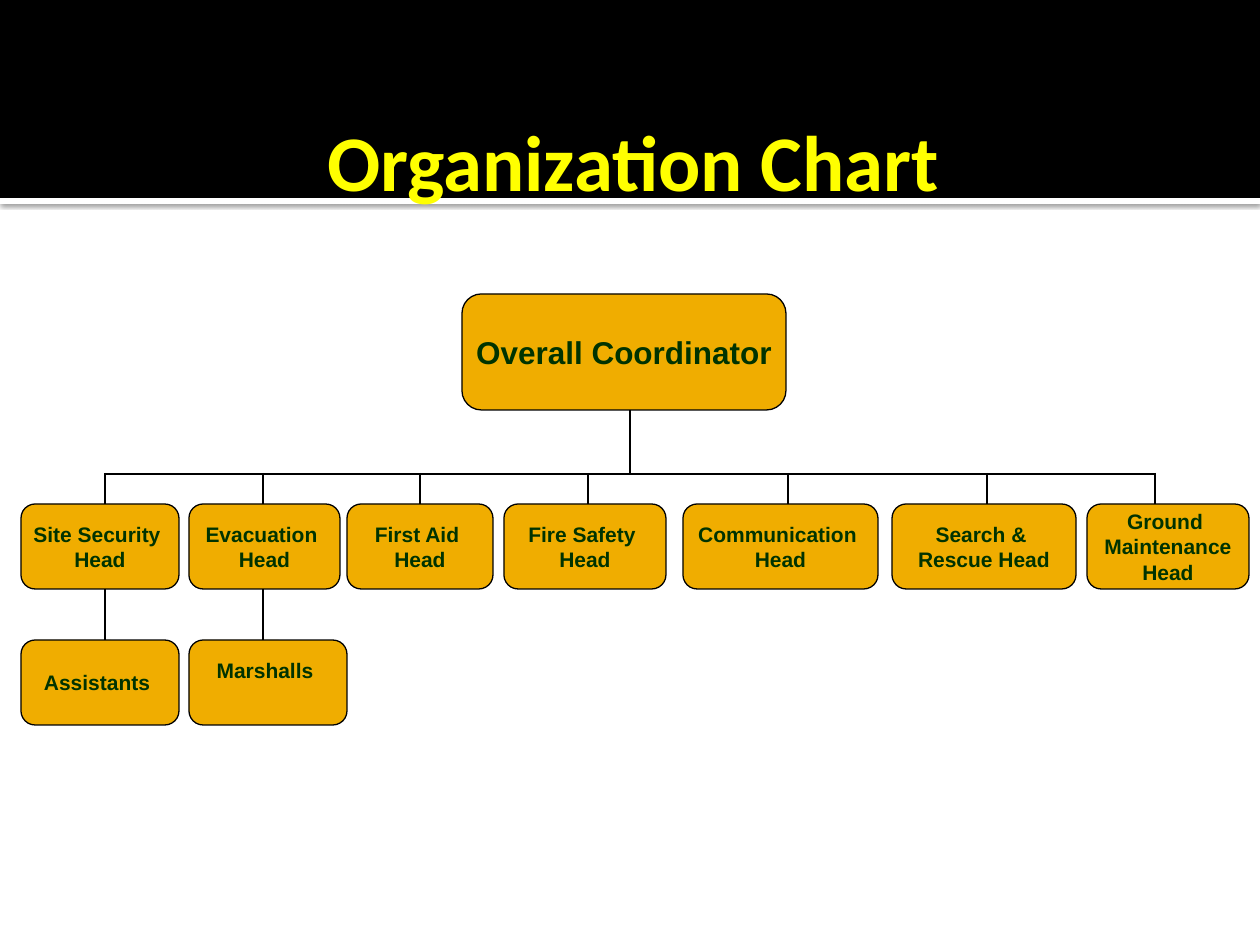
"""Build the organization chart slide."""
from lxml import etree
from pptx import Presentation, util as u
from pptx.dml.color import RGBColor
from pptx.enum import shapes as s, text as t
from pptx.oxml import parse_xml
from pptx.oxml.ns import nsdecls, qn

HEX = {"black": "000000", "white": "FFFFFF", "gold": "F0AD00",
       "green": "003300", "yellow": "FFFF00"}
TITLE = "Organization Chart"
CHIEF = ("Overall Coordinator", 462, 324)
HEADS = [
    ("Site Security \nHead", 21, 158, 105),
    ("Evacuation \nHead", 189, 151, 263),
    ("First Aid \nHead", 347, 146, 420),
    ("Fire Safety \nHead", 504, 162, 588),
    ("Communication \nHead", 683, 195, 788),
    ("Search & \nRescue Head", 892, 184, 987),
    ("Ground \nMaintenance\nHead", 1087, 162, 1155),
]
TEAMS = [("Assistants ", 0), ("Marshalls ", 24)]
TOP, TALL = 294, 116
BUS, ROW, HIGH, LOW = 473, 504, 85, 640
MID, TEAM = 630, 158


def px(n):
    return u.Emu(round(n * 914400 / 126))


def color(name):
    return RGBColor.from_string(HEX[name])


def style(frame, size, face, ink):
    frame.vertical_anchor = t.MSO_ANCHOR.MIDDLE
    for para in frame.paragraphs:
        para.alignment = t.PP_ALIGN.CENTER
        font = para.font
        font.size, font.name, font.bold = u.Pt(size), face, True
        font.color.rgb = color(ink)


def block(kind, x, y, w, h, fill):
    shape = slide.shapes.add_shape(kind, px(x), px(y), px(w), px(h))
    shape.shadow.inherit = False
    shape.fill.solid()
    shape.fill.fore_color.rgb = color(fill)
    shape.line.fill.background()
    return shape


def box(words, x, y, w, h, size=12, lift=0):
    shape = block(s.MSO_SHAPE.ROUNDED_RECTANGLE, x, y, w, h, "gold")
    shape.line.color.rgb = color("black")
    shape.line.width = u.Pt(0.75)
    frame = shape.text_frame
    frame.text = words
    frame.word_wrap = False
    frame.margin_left = frame.margin_right = frame.margin_top = 0
    frame.margin_bottom = px(lift)
    style(frame, size, "Arial", "green")


def link(x, y, x2, y2):
    line = slide.shapes.add_connector(
        s.MSO_CONNECTOR.STRAIGHT, px(x), px(y), px(x2), px(y2))
    line.line.color.rgb = color("black")
    line.line.width = u.Pt(0.75)
    etree.SubElement(line._element.spPr, qn("a:effectLst"))


def banner():
    rule = block(s.MSO_SHAPE.RECTANGLE, 0, 198, 1260, 6, "white")
    glow = rule._element.spPr.find(qn("a:effectLst"))
    glow.append(parse_xml(
        f'<a:outerShdw {nsdecls("a")} blurRad="{u.Pt(2.5)}" '
        f'dist="{u.Pt(0.8)}" dir="5400000" rotWithShape="0">'
        f'<a:srgbClr val="{HEX["black"]}"><a:alpha val="60000"/>'
        '</a:srgbClr></a:outerShdw>'))
    block(s.MSO_SHAPE.RECTANGLE, 0, 0, 1260, 198, "black")
    area = slide.shapes.add_textbox(px(63), px(105), px(1134), px(110))
    frame = area.text_frame
    frame.text = TITLE
    frame.word_wrap = True
    frame.margin_right = u.Inches(0.05)
    style(frame, 45, "Calibri", "yellow")


def chart():
    words, x, w = CHIEF
    box(words, x, TOP, w, TALL, 18)
    link(MID, TOP + TALL, MID, BUS)
    link(HEADS[0][3], BUS + 1, HEADS[-1][3], BUS + 1)
    for words, x, w, stem in HEADS:
        box(words, x, ROW, w, HIGH)
        link(stem, BUS, stem, ROW)
    for (words, lift), (_, x, _, stem) in zip(TEAMS, HEADS):
        box(words, x, LOW, TEAM, HIGH, lift=lift)
        link(stem, ROW + HIGH, stem, LOW)


deck = Presentation()
deck.slide_width, deck.slide_height = u.Inches(10), u.Inches(7.5)
slide = deck.slides.add_slide(deck.slide_layouts[6])
banner()
chart()
deck.save("out.pptx")
